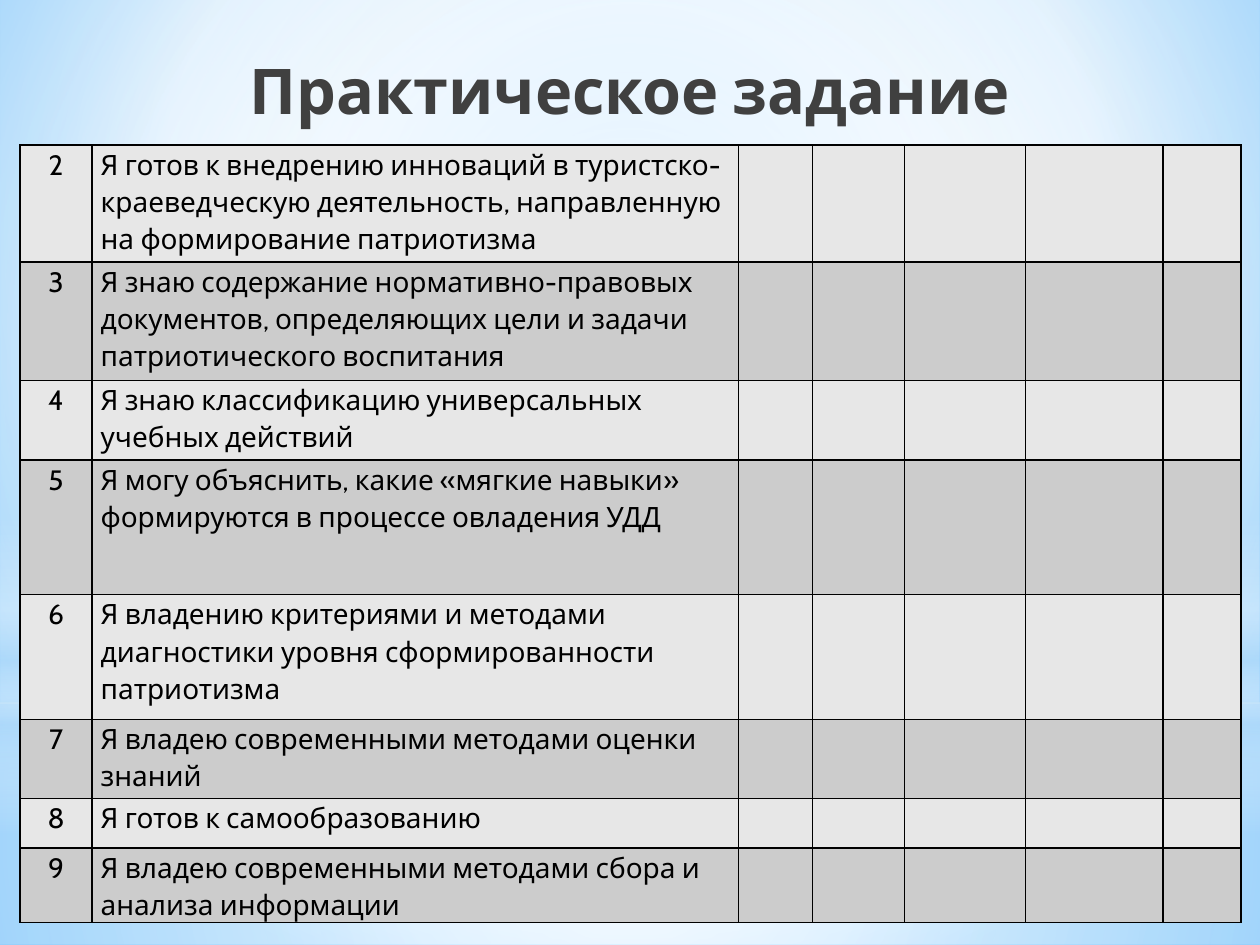
from lxml import etree
from pptx import Presentation
from pptx import util as u
from pptx.dml.color import RGBColor
from pptx.enum import shapes, text
from pptx.oxml.ns import qn

W, H = 10, 7.5
FONT = "Cabin"
CENTER = [50, 50, 50, 50]
COLS = [0.57, 5.13, 0.59, 0.73, 0.96, 1.09, 0.62]
ROWS = [0.93, 0.94, 0.63, 1.07, 0.99, 0.63, 0.39, 0.59]
BANDS = ["E7E7E7", "CCCCCC"]
FIRST_NUMBER = 2
STATEMENTS = [
    "Я готов к внедрению инноваций в туристско-краеведческую деятельность, "
    "направленную на формирование патриотизма",
    "Я знаю содержание нормативно-правовых документов, определяющих цели и "
    "задачи патриотического воспитания",
    "Я знаю классификацию универсальных учебных действий",
    "Я могу объяснить, какие «мягкие навыки» формируются в процессе овладения УДД",
    "Я владению критериями и методами диагностики уровня сформированности патриотизма",
    "Я владею современными методами оценки знаний",
    "Я готов к самообразованию",
    "Я владею современными методами сбора и анализа информации",
]


def paint(fill, color):
    fill.solid()
    fill.fore_color.rgb = RGBColor.from_string(color)


def sub(parent, tag, **attrs):
    return etree.SubElement(parent, qn(tag), {k: str(v) for k, v in attrs.items()})


def paint_gradient(fill, parent, stops, focus=None):
    paint(fill, "FFFFFF")
    solid = parent.find(qn("a:solidFill"))
    grad = etree.Element(qn("a:gradFill"), rotWithShape="1")
    gs_lst = sub(grad, "a:gsLst")
    for pos, color, alpha in stops:
        clr = sub(sub(gs_lst, "a:gs", pos=pos * 1000), "a:srgbClr", val=color)
        if alpha < 100:
            sub(clr, "a:alpha", val=alpha * 1000)
    if focus:
        sides = {side: share * 1000 for side, share in zip("ltrb", focus)}
        sub(sub(grad, "a:path", path="circle"), "a:fillToRect", **sides)
    else:
        sub(grad, "a:lin", ang=90 * 60000, scaled=0)
    parent.replace(solid, grad)


def add_glow(s, kind, top, height, stops, focus=None):
    sp = s.shapes.add_shape(kind, 0, u.Inches(top), u.Inches(W), u.Inches(height))
    sp.shadow.inherit = False
    sp.line.fill.background()
    paint_gradient(sp.fill, sp.element.spPr, stops, focus)


def add_backdrop(s):
    fill = s.background.fill
    fill.solid()
    paint_gradient(fill, s.element.find(".//" + qn("p:bgPr")),
                   [(0, "9ED5FF", 100), (60, "FFFFFF", 100), (100, "5BB9FF", 100)],
                   [20, 10, 20, 60])
    rect, oval = shapes.MSO_SHAPE.RECTANGLE, shapes.MSO_SHAPE.OVAL
    horizon = 5.58
    add_glow(s, rect, horizon, H - horizon,
             [(0, "FFFFFF", 91), (37, "FFFFFF", 76), (100, "B4DCFA", 79)], CENTER)
    add_glow(s, rect, 0, horizon,
             [(0, "FFFFFF", 89), (48, "FFFFFF", 62), (100, "B4DCFA", 79)], CENTER)
    add_glow(s, rect, 4.12, 2.5,
             [(0, "FFFFFF", 0), (29, "FFFFFF", 30), (45, "B4DCFA", 40),
              (55, "FFFFFF", 26), (65, "B4DCFA", 60), (100, "FFFFFF", 0)])
    add_glow(s, oval, 1.75, horizon, [(0, "FFFFFF", 100), (56, "FFFFFF", 0)], CENTER)


def style_font(font, size, color, bold=False):
    font.name, font.size, font.bold = FONT, u.Pt(size), bold
    font.color.rgb = RGBColor.from_string(color)


def add_borders(cell):
    tc_pr = cell._tc.get_or_add_tcPr()
    for i, side in enumerate("LRTB"):
        ln = etree.Element(qn("a:ln" + side), w=str(u.Pt(1)))
        sub(sub(ln, "a:solidFill"), "a:srgbClr", val="000000")
        tc_pr.insert(i, ln)


def fill_cell(cell, content, band, centered):
    cell.margin_left = cell.margin_right = u.Inches(0.07)
    cell.margin_top = cell.margin_bottom = 0
    paint(cell.fill, band)
    add_borders(cell)
    p = cell.text_frame.paragraphs[0]
    p.text = content
    p.line_spacing = 1.1
    p.alignment = text.PP_ALIGN.CENTER if centered else text.PP_ALIGN.LEFT
    style_font(p.font, 16, "000000")
    for r in p.runs:
        style_font(r.font, 16, "000000")


def add_checklist(s):
    frame = s.shapes.add_table(len(ROWS), len(COLS), u.Inches(0.16), u.Inches(1.15),
                               u.Inches(sum(COLS)), u.Inches(sum(ROWS)))
    table = frame.table
    table.first_row = table.horz_banding = False
    for column, width in zip(table.columns, COLS):
        column.width = u.Inches(width)
    for i, (row, height) in enumerate(zip(table.rows, ROWS)):
        row.height = u.Inches(height)
        contents = [str(FIRST_NUMBER + i), STATEMENTS[i]] + [""] * (len(COLS) - 2)
        for j, content in enumerate(contents):
            fill_cell(table.cell(i, j), content, BANDS[i % 2], j == 0)


def add_title(s, content):
    sp = s.shapes.add_textbox(0, u.Inches(0.13), u.Inches(W), u.Inches(1.15))
    tf = sp.text_frame
    tf.word_wrap = True
    tf.vertical_anchor = text.MSO_ANCHOR.MIDDLE
    p = tf.paragraphs[0]
    p.text = content
    p.alignment = text.PP_ALIGN.CENTER
    style_font(p.runs[0].font, 36, "404040", bold=True)


def main():
    prs = Presentation()
    prs.slide_width, prs.slide_height = u.Inches(W), u.Inches(H)
    s = prs.slides.add_slide(prs.slide_layouts[6])
    add_backdrop(s)
    add_checklist(s)
    add_title(s, "Практическое задание")
    prs.save("out.pptx")


if __name__ == "__main__":
    main()
